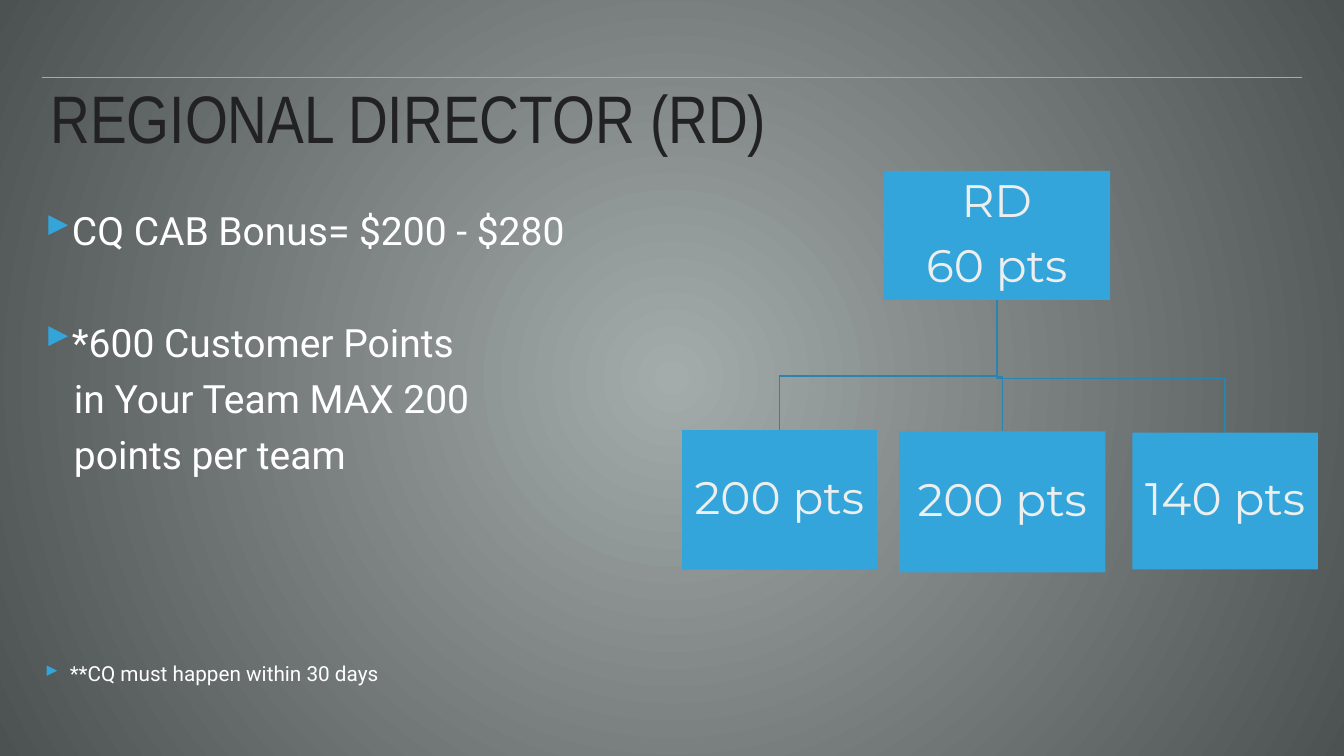
import dataclasses

import lxml.etree
import pptx
import pptx.dml.color
import pptx.enum.shapes
import pptx.enum.text
import pptx.oxml.ns
import pptx.util


@dataclasses.dataclass(frozen=True)
class Theme:
    glow: str = "A4ABAB"
    edge: str = "4C5151"
    rule: str = "A6AAA9"
    heading: str = "222222"
    body: str = "FFFFFF"
    accent: str = "34A5DA"
    branch: str = "2A84AF"
    label: str = "EDEEEE"
    heading_font: str = "Arial Narrow"
    body_font: str = "Roboto"
    label_font: str = "Montserrat"
    heading_size: float = 96
    body_size: float = 55.7
    note_size: float = 29.6
    label_size: float = 65
    line_width: float = 2
    hang: float = 0.59
    continuation: float = 0.69


def rgb(value):
    return pptx.dml.color.RGBColor.from_string(value)


def add_xml(parent, tag, **attributes):
    return lxml.etree.SubElement(parent, pptx.oxml.ns.qn(tag), attributes)


class SlideBuilder:
    COLUMNS, ROWS = 32, 18

    def __init__(self, deck, theme):
        self.theme = theme
        self.slide = deck.slides.add_slide(deck.slide_layouts[6])
        self.column = deck.slide_width / self.COLUMNS
        self.row = deck.slide_height / self.ROWS

    def x(self, columns):
        return round(columns * self.column)

    def y(self, rows):
        return round(rows * self.row)

    def frame(self, left, top, width, height):
        return self.x(left), self.y(top), self.x(width), self.y(height)

    def background(self):
        fill = self.slide.background.fill
        fill.gradient()
        colours = (self.theme.glow, self.theme.edge)
        for stop, position, colour in zip(fill.gradient_stops, (0, 1), colours):
            stop.position = position
            stop.color.rgb = rgb(colour)
        gradient = self.slide.element.find(".//" + pptx.oxml.ns.qn("a:gradFill"))
        gradient.remove(gradient.find(pptx.oxml.ns.qn("a:lin")))
        circle = add_xml(gradient, "a:path", path="circle")
        add_xml(circle, "a:fillToRect", l="50000", t="50000", r="50000", b="50000")

    def rule(self, left, right, row):
        line = self.slide.shapes.add_connector(
            pptx.enum.shapes.MSO_CONNECTOR.STRAIGHT,
            self.x(left), self.y(row), self.x(right), self.y(row))
        line.line.color.rgb = rgb(self.theme.rule)
        line.line.width = pptx.util.Pt(self.theme.line_width)
        add_xml(line.element.spPr, "a:effectLst")

    def prepare(self, text_frame, inset):
        text_frame.word_wrap = True
        for side in ("left", "right", "top", "bottom"):
            setattr(text_frame, "margin_" + side, pptx.util.Inches(inset))

    def paragraph(self, text_frame, index, text, font, size, colour,
                  spacing, before=0, bullet=False, indent=0):
        line = text_frame.add_paragraph() if index else text_frame.paragraphs[0]
        line.text = text
        properties = line._p.get_or_add_pPr()
        if bullet:
            hang = self.x(self.theme.hang)
            properties.set("marL", str(hang))
            properties.set("indent", str(-hang))
            tint = add_xml(properties, "a:buClr")
            add_xml(tint, "a:srgbClr", val=self.theme.accent)
            add_xml(properties, "a:buSzPct", val="105000")
            add_xml(properties, "a:buChar", char="▸")
        elif indent:
            properties.set("marL", str(self.x(indent)))
            properties.set("indent", "0")
        line.line_spacing = spacing
        line.space_before = pptx.util.Pt(before)
        line.font.name = font
        line.font.size = pptx.util.Pt(size)
        line.font.color.rgb = rgb(colour)
        return line

    def title(self, text, *area):
        text_frame = self.slide.shapes.add_textbox(*self.frame(*area)).text_frame
        self.prepare(text_frame, 0.06)
        self.paragraph(text_frame, 0, text, self.theme.heading_font,
                       self.theme.heading_size, self.theme.heading, 0.8)

    def body(self, lines, *area):
        text_frame = self.slide.shapes.add_textbox(*self.frame(*area)).text_frame
        self.prepare(text_frame, 0.06)
        for index, (text, size, before, bullet) in enumerate(lines):
            self.paragraph(text_frame, index, text, self.theme.body_font, size,
                           self.theme.body, 0.8, before, bullet,
                           self.theme.continuation)

    def box(self, lines, *area):
        box = self.slide.shapes.add_shape(
            pptx.enum.shapes.MSO_SHAPE.RECTANGLE, *self.frame(*area))
        box.shadow.inherit = False
        box.fill.solid()
        box.fill.fore_color.rgb = rgb(self.theme.accent)
        box.line.fill.background()
        self.prepare(box.text_frame, 0.05)
        box.text_frame.vertical_anchor = pptx.enum.text.MSO_ANCHOR.MIDDLE
        for index, text in enumerate(lines):
            before = 0.35 * self.theme.label_size if index else 0
            line = self.paragraph(box.text_frame, index, text, self.theme.label_font,
                                  self.theme.label_size, self.theme.label, 0.9, before)
            line.alignment = pptx.enum.text.PP_ALIGN.CENTER

    def branch(self, parent, child, drop):
        start, end = (area[0] + area[2] / 2 for area in (parent, child))
        bottom, top = parent[1] + parent[3], child[1]
        corners = [(start, top - drop), (end, top - drop), (end, top)]
        outline = self.slide.shapes.build_freeform(self.x(start), self.y(bottom))
        outline.add_line_segments(
            [(self.x(column), self.y(row)) for column, row in corners], close=False)
        elbow = outline.convert_to_shape()
        elbow.shadow.inherit = False
        elbow.fill.background()
        elbow.line.color.rgb = rgb(self.theme.branch)
        elbow.line.width = pptx.util.Pt(self.theme.line_width)


def main():
    deck = pptx.Presentation()
    deck.slide_width = pptx.util.Inches(26.67)
    deck.slide_height = pptx.util.Inches(15)
    theme = Theme()
    page = SlideBuilder(deck, theme)

    page.background()
    page.rule(1, 31, 1.84)
    page.title("REGIONAL DIRECTOR (RD)", 1.13, 2.12, 19.04, 2.94)
    page.body([
        ("CQ CAB Bonus= $200 - $280", theme.body_size, 0, True),
        ("*600 Customer Points", theme.body_size, 106, True),
        ("in Your Team MAX 200", theme.body_size, 27, False),
        ("points per team", theme.body_size, 27, False),
        ("**CQ must happen within 30 days", theme.note_size, 269, True),
    ], 1, 5.06, 15.5, 11.94)

    director = (21.04, 4.07, 5.39, 3.07)
    teams = [
        ("200 pts", (16.24, 10.24, 4.64, 3.32)),
        ("200 pts", (21.41, 10.27, 4.91, 3.36)),
        ("140 pts", (26.96, 10.3, 4.42, 3.26)),
    ]
    for points, area in reversed(teams):
        page.branch(director, area, 1.29)
    page.box(["RD", "60 pts"], *director)
    for points, area in teams:
        page.box([points], *area)

    deck.save("out.pptx")


if __name__ == "__main__":
    main()
